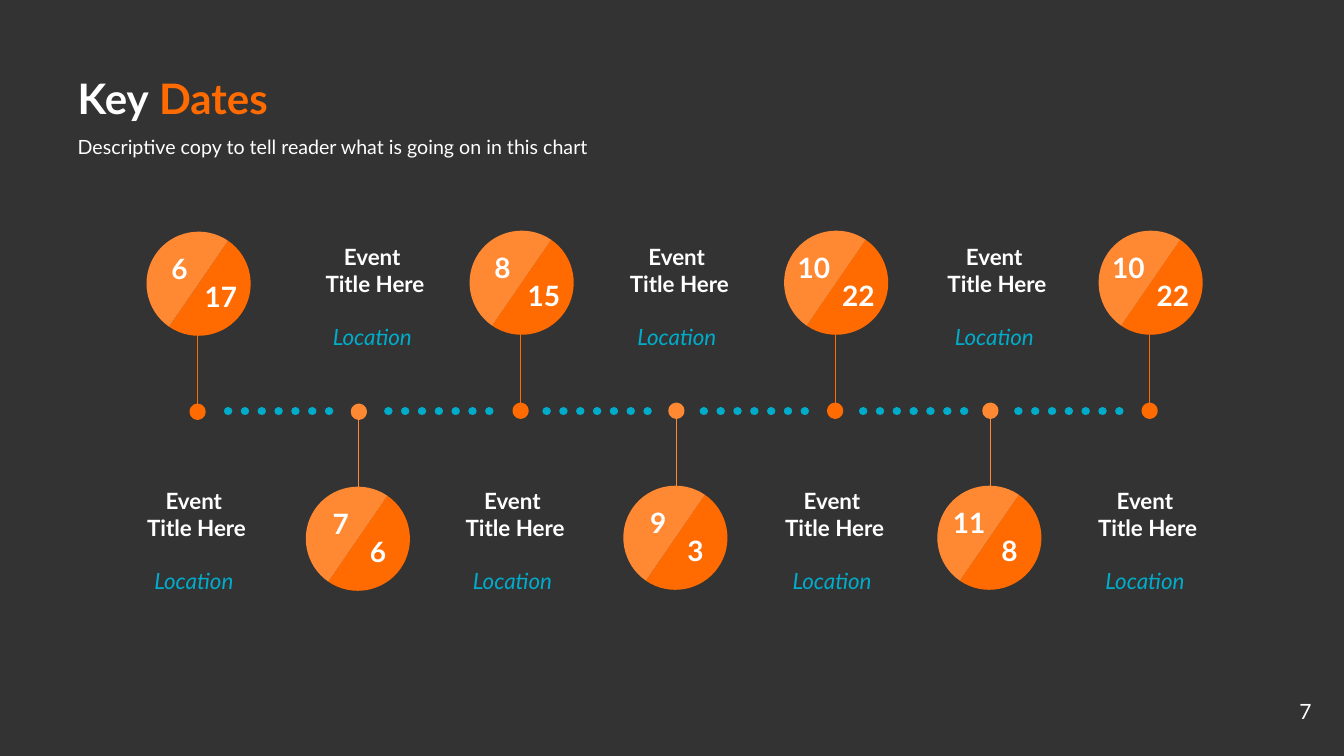
import math
from typing import NamedTuple

from lxml import etree
from pptx import Presentation, util as u
from pptx.dml.color import RGBColor
from pptx.enum import dml, shapes, text
from pptx.oxml.ns import qn

# Grid of 133.33 columns by 75 rows; one cell is a tenth of an inch.
COLUMNS, ROWS = 133.33, 75
FONT = "Lato"
WHITE, ORANGE, LIGHT_ORANGE = "FFFFFF", "FF6B00", "FF8833"
TEAL, CHARCOAL = "00ACCA", "333333"

AXIS = 40.8
DOTS_LENGTH = 10.15
DISC_RADIUS, DISC_TILT = 5.17, 34.5
CURVE = 0.55  # control point distance of a quarter circle, as a share of its radius
REACH_ABOVE, REACH_BELOW = 12.7, 12.6
MARKER = 1.1
LABEL_WIDTH = 15.8
LABEL_ABOVE, LABEL_BELOW = 23.6, 47.8


class Event(NamedTuple):
    column: float
    row: float
    month: str
    day: str
    label_left: float
    above: bool


EVENTS = [
    Event(19.6, 40.85, "6", "17", 11.6, True),
    Event(35.6, 40.85, "7", "6", 29.3, False),
    Event(51.65, 40.75, "8", "15", 43.2, True),
    Event(67.1, 40.75, "9", "3", 59.5, False),
    Event(82.85, 40.75, "10", "22", 74.9, True),
    Event(98.25, 40.75, "11", "8", 91, False),
    Event(114.05, 40.75, "10", "22", 105.95, True),
]
DOTS_LEFT = [22.5, 38.4, 54.1, 69.7, 85.5, 100.9]


def cells(count: float) -> u.Emu:
    return u.Inches(count / 10)


def color(hex_code: str) -> RGBColor:
    return RGBColor.from_string(hex_code)


def style(paragraph, size: float, hex_code: str = WHITE, bold: bool = False,
          italic: bool = False, align=text.PP_ALIGN.CENTER) -> None:
    paragraph.alignment = align
    font = paragraph.font
    font.name, font.size = FONT, u.Pt(size)
    font.bold, font.italic = bold, italic
    font.color.rgb = color(hex_code)


def add_text_box(slide, left: float, top: float, width: float, height: float):
    box = slide.shapes.add_textbox(*map(cells, (left, top, width, height)))
    box.text_frame.word_wrap = True
    return box.text_frame


def place(placeholder, left: float, top: float, width: float, height: float):
    placeholder.left, placeholder.top = cells(left), cells(top)
    placeholder.width, placeholder.height = cells(width), cells(height)
    placeholder.text_frame.auto_size = text.MSO_AUTO_SIZE.NONE
    return placeholder.text_frame


def add_line(slide, start: tuple[float, float], end: tuple[float, float],
             hex_code: str, width: float):
    line = slide.shapes.add_connector(
        shapes.MSO_CONNECTOR.STRAIGHT, *map(cells, start + end))
    line.line.color.rgb = color(hex_code)
    line.line.width = u.Pt(width)
    etree.SubElement(line._element.spPr, qn("a:effectLst"))
    return line


def add_dots(slide, left: float) -> None:
    dots = add_line(slide, (left + DOTS_LENGTH, AXIS), (left, AXIS), TEAL, 6)
    dots.line.dash_style = dml.MSO_LINE.ROUND_DOT
    dots.line._get_or_add_ln().set("cap", "rnd")


def round_edges(half, side: int) -> None:
    """Turn the two slanted edges of a triangle into quarter circles."""
    radius = half.width
    flat, outer = (0, radius) if side == 1 else (radius, 0)
    bend = flat + side * CURVE * radius
    quarters = (
        ((bend, 0), (outer, (1 - CURVE) * radius), (outer, radius)),
        ((outer, (1 + CURVE) * radius), (bend, half.height), (flat, half.height)),
    )
    for edge, quarter in zip(list(half._element.iter(qn("a:lnTo"))), quarters):
        curve = etree.Element(qn("a:cubicBezTo"))
        for x, y in quarter:
            etree.SubElement(curve, qn("a:pt"), x=str(round(x)), y=str(round(y)))
        edge.getparent().replace(edge, curve)


def add_half_disc(slide, column: float, row: float, side: int, hex_code: str) -> None:
    """Draw the right (side 1) or left (side -1) half of a tilted disc."""
    tilt = math.radians(DISC_TILT)
    shift = side * DISC_RADIUS / 2
    flat = column + shift * math.cos(tilt) - shift
    middle = row + shift * math.sin(tilt)
    top, bottom = middle - DISC_RADIUS, middle + DISC_RADIUS
    builder = slide.shapes.build_freeform(cells(flat), cells(top))
    builder.add_line_segments([
        (cells(flat + side * DISC_RADIUS), cells(middle)),
        (cells(flat), cells(bottom)),
    ], close=True)
    half = builder.convert_to_shape()
    round_edges(half, side)
    half.rotation = DISC_TILT
    half.shadow.inherit = False
    half.fill.solid()
    half.fill.fore_color.rgb = color(hex_code)
    half.line.fill.background()


def add_number(slide, number: str, column: float, top: float) -> None:
    frame = add_text_box(slide, column - LABEL_WIDTH / 2, top, LABEL_WIDTH, 4.4)
    frame.text = number
    style(frame.paragraphs[0], 20, bold=True)


def add_marker(slide, event: Event, hex_code: str) -> None:
    marker = slide.shapes.add_shape(
        shapes.MSO_SHAPE.OVAL, cells(event.column - MARKER / 2),
        cells(event.row - MARKER / 2), cells(MARKER), cells(MARKER))
    marker.shadow.inherit = False
    marker.fill.solid()
    marker.fill.fore_color.rgb = color(hex_code)
    marker.line.color.rgb = color(hex_code)
    marker.line.width = u.Pt(3.75)


def add_label(slide, event: Event) -> None:
    top = LABEL_BELOW if event.above else LABEL_ABOVE
    frame = add_text_box(slide, event.label_left, top, LABEL_WIDTH, 11.8)
    heading = frame.paragraphs[0]
    heading.text = "Event \vTitle Here"
    style(heading, 16, bold=True)
    location = frame.add_paragraph()
    location.text = "Location "
    location.space_before = u.Pt(19.2)
    style(location, 16, TEAL, italic=True)


def add_event(slide, event: Event) -> None:
    direction = -1 if event.above else 1
    accent = ORANGE if event.above else LIGHT_ORANGE
    disc_column = event.column - direction * 0.1
    disc_row = event.row + (-REACH_ABOVE if event.above else REACH_BELOW)
    add_half_disc(slide, disc_column, disc_row, 1, ORANGE)
    add_half_disc(slide, disc_column, disc_row, -1, LIGHT_ORANGE)
    stem_start = event.row + direction * MARKER / 2
    add_line(slide, (event.column, stem_start),
             (event.column, stem_start + direction * 7.5), accent, 0.5)
    add_marker(slide, event, accent)
    month_shift = 1.8 if len(event.month) == 1 else 2.1
    day_shift = 1.9 if len(event.day) == 1 else 2.3
    add_number(slide, event.month, event.column - month_shift, disc_row - 3.65)
    add_number(slide, event.day, event.column + day_shift, disc_row - 0.95)
    add_label(slide, event)


def add_heading(slide) -> None:
    title = place(slide.shapes.title, 6.7, 5.6, 97.5, 8.9)
    title.vertical_anchor = text.MSO_ANCHOR.MIDDLE
    paragraph = title.paragraphs[0]
    paragraph.line_spacing = 0.9
    style(paragraph, 30, bold=True, align=text.PP_ALIGN.LEFT)
    for words, hex_code in (("Key", WHITE), (" Dates", ORANGE)):
        run = paragraph.add_run()
        run.text = words
        run.font.color.rgb = color(hex_code)

    body = place(slide.placeholders[1], 6.7, 13.15, 66, 7)
    body.text = "Descriptive copy to tell reader what is going on in this chart"
    paragraph = body.paragraphs[0]
    paragraph.line_spacing, paragraph.space_before = 0.9, u.Pt(0)
    properties = paragraph._p.get_or_add_pPr()
    properties.set("marL", "0")
    properties.set("indent", "0")
    etree.SubElement(properties, qn("a:buNone"))
    style(paragraph, 14, align=text.PP_ALIGN.LEFT)


presentation = Presentation()
presentation.slide_width, presentation.slide_height = cells(COLUMNS), cells(ROWS)
slide = presentation.slides.add_slide(presentation.slide_layouts[1])
slide.background.fill.solid()
slide.background.fill.fore_color.rgb = color(CHARCOAL)
add_heading(slide)
for left in DOTS_LEFT:
    add_dots(slide, left)
for event in EVENTS:
    add_event(slide, event)
page_number = add_text_box(slide, 122.2, 68.8, 8.9, 3.5)
page_number.text = "7"
style(page_number.paragraphs[0], 15, align=text.PP_ALIGN.RIGHT)
presentation.save("out.pptx")
